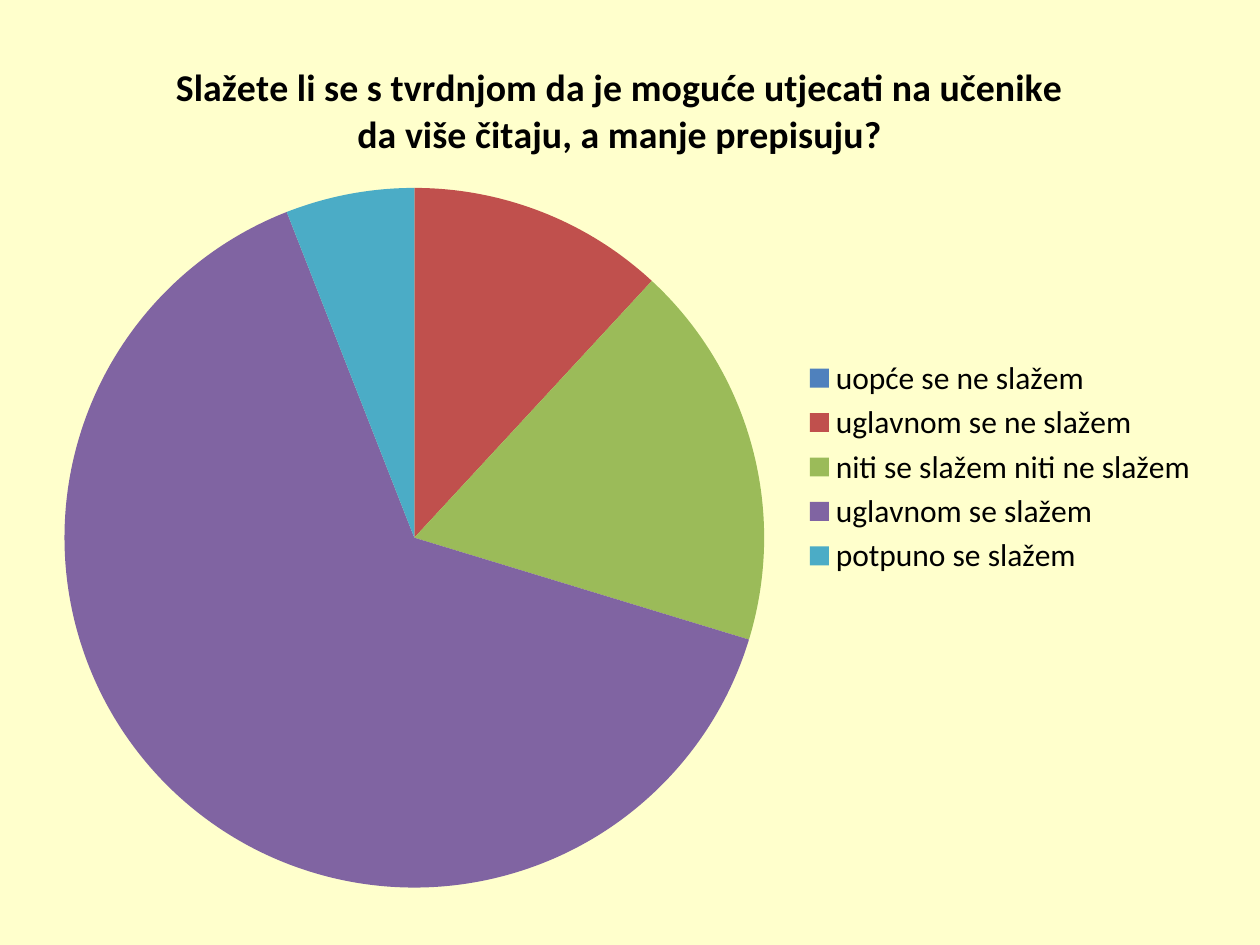
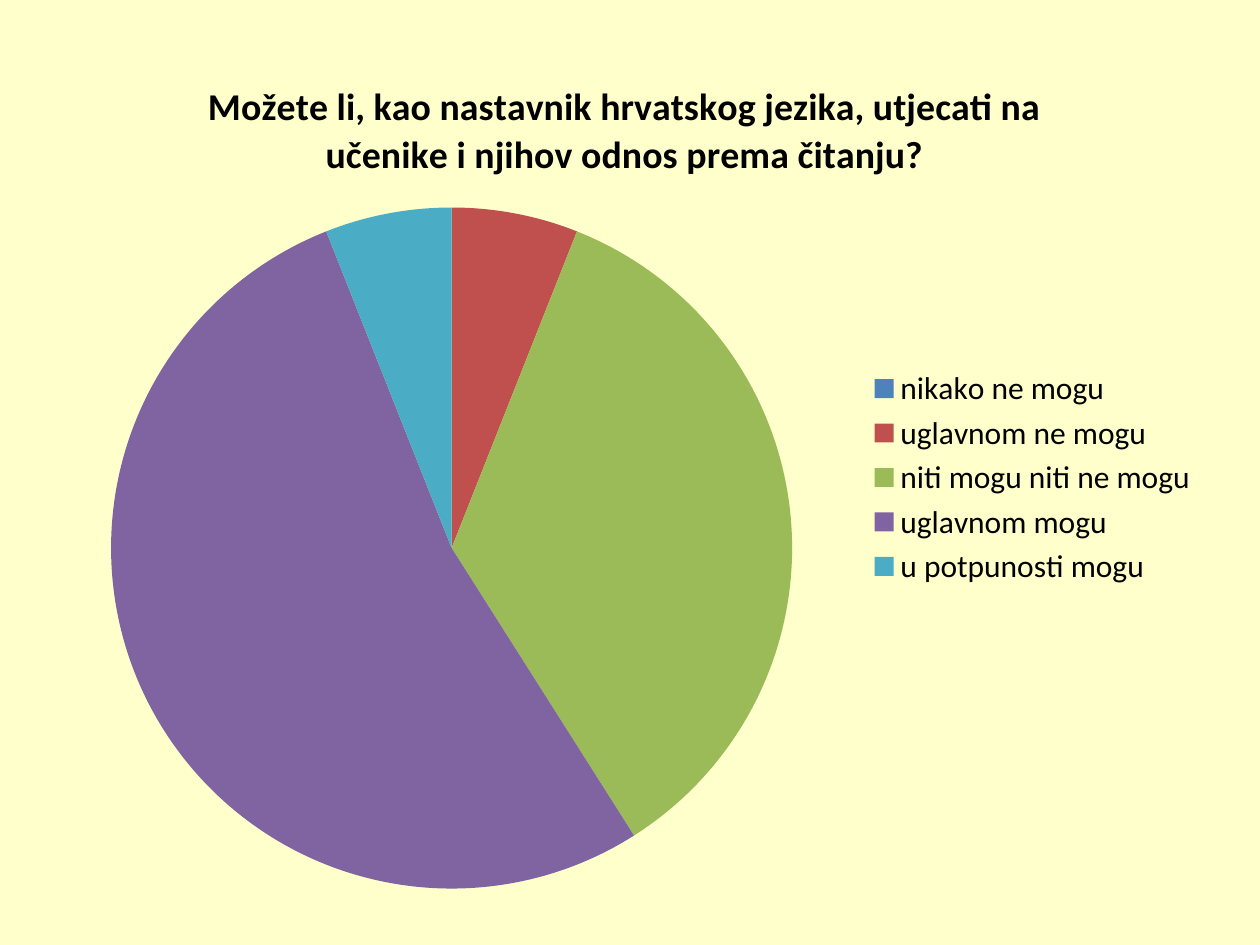
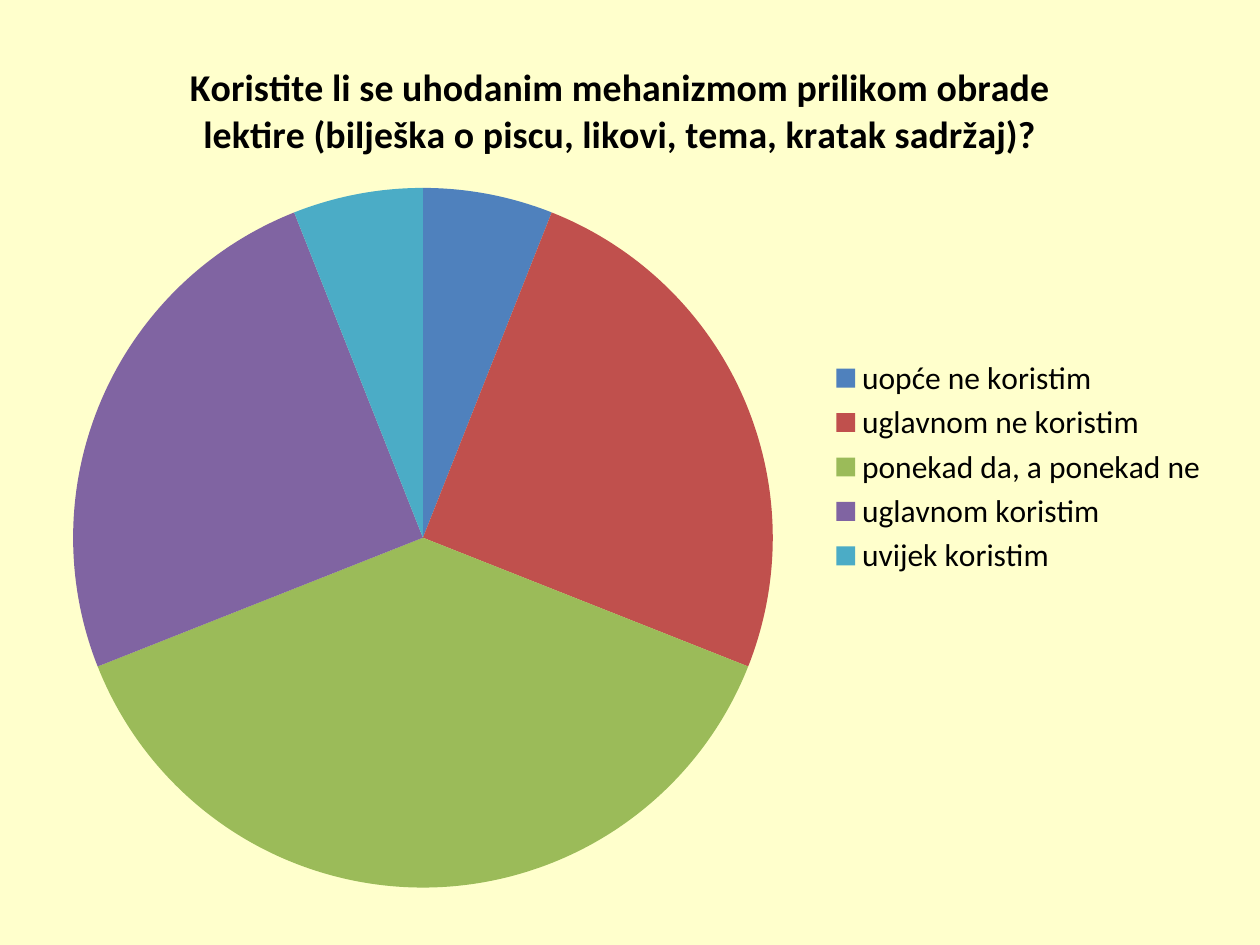
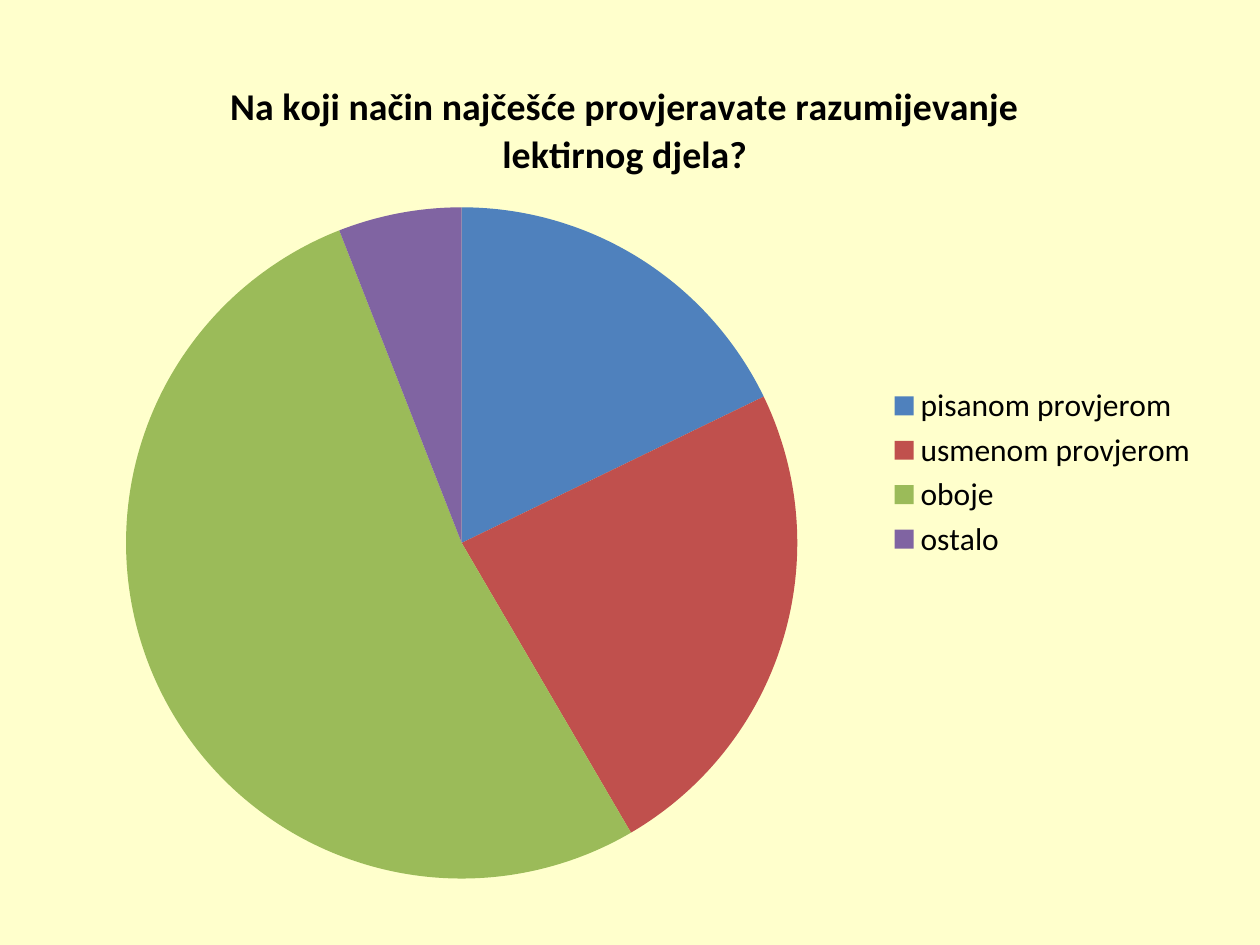
from pptx import Presentation
from pptx.chart.data import CategoryChartData
from pptx.dml.color import RGBColor
from pptx.enum.chart import XL_CHART_TYPE as ChartType, XL_LEGEND_POSITION as LegendPos
from pptx.util import Pt

PX = 914400 / 126
FONT = "Calibri"
TEXT = "000000"
BACKGROUND = "FFFFCC"
SLICES = ["4F81BD", "C0504D", "9BBB59", "8064A2", "4BACC6"]

QUESTIONS = [
    ("Slažete li se s tvrdnjom da je moguće utjecati na učenike da više čitaju, a manje prepisuju?",
     (29, 29, 1182, 876),
     {"uopće se ne slažem": 0, "uglavnom se ne slažem": 12,
      "niti se slažem niti ne slažem": 18, "uglavnom se slažem": 65,
      "potpuno se slažem": 6}),
    ("Možete li, kao nastavnik hrvatskog jezika, utjecati na učenike i njihov odnos prema čitanju?",
     (39, 49, 1172, 857),
     {"nikako ne mogu": 0, "uglavnom ne mogu": 6, "niti mogu niti ne mogu": 35,
      "uglavnom mogu": 53, "u potpunosti mogu": 6}),
    ("Koristite li se uhodanim mehanizmom prilikom obrade lektire "
     "(bilješka o piscu, likovi, tema, kratak sadržaj)?",
     (20, 29, 1201, 876),
     {"uopće ne koristim": 6, "uglavnom ne koristim": 25,
      "ponekad da, a ponekad ne": 38, "uglavnom koristim": 25, "uvijek koristim": 6}),
    ("Na koji način najčešće provjeravate razumijevanje lektirnog djela?",
     (39, 49, 1172, 847),
     {"pisanom provjerom": 18, "usmenom provjerom": 24, "oboje": 53, "ostalo": 6}),
]


def px(n):
    """Turn pixels into EMU."""
    return round(n * PX)


def color(value):
    """Turn a hex string into a colour."""
    return RGBColor.from_string(value)


def style_font(font, size, bold=False):
    """Apply the shared typeface and text colour."""
    font.name = FONT
    font.size = Pt(size)
    font.bold = bold
    font.color.rgb = color(TEXT)


def add_pie(s, question, box, answers):
    """Place a titled pie chart with its legend in the given box."""
    data = CategoryChartData()
    data.categories = list(answers)
    data.add_series(question, list(answers.values()))
    chart = s.shapes.add_chart(ChartType.PIE, *map(px, box), data).chart
    style_font(chart.font, 18)

    chart.has_title = True
    tf = chart.chart_title.text_frame
    tf.text = question
    style_font(tf.paragraphs[0].runs[0].font, 21.6, bold=True)

    chart.has_legend = True
    chart.legend.position = LegendPos.RIGHT
    chart.legend.include_in_layout = False
    style_font(chart.legend.font, 18)

    plot = chart.plots[0]
    plot.vary_by_categories = True
    for i, fill_color in enumerate(SLICES[:len(answers)]):
        fill = plot.series[0].points[i].format.fill
        fill.solid()
        fill.fore_color.rgb = color(fill_color)


def add_question_slide(prs, question, box, answers):
    """Add a slide showing the answers to one survey question."""
    s = prs.slides.add_slide(prs.slide_layouts[6])
    fill = s.background.fill
    fill.solid()
    fill.fore_color.rgb = color(BACKGROUND)
    add_pie(s, question, box, answers)


def main():
    """Build and save the presentation."""
    prs = Presentation()
    prs.slide_width, prs.slide_height = px(1260), px(945)
    for question, box, answers in QUESTIONS:
        add_question_slide(prs, question, box, answers)
    prs.save("out.pptx")


if __name__ == "__main__":
    main()
